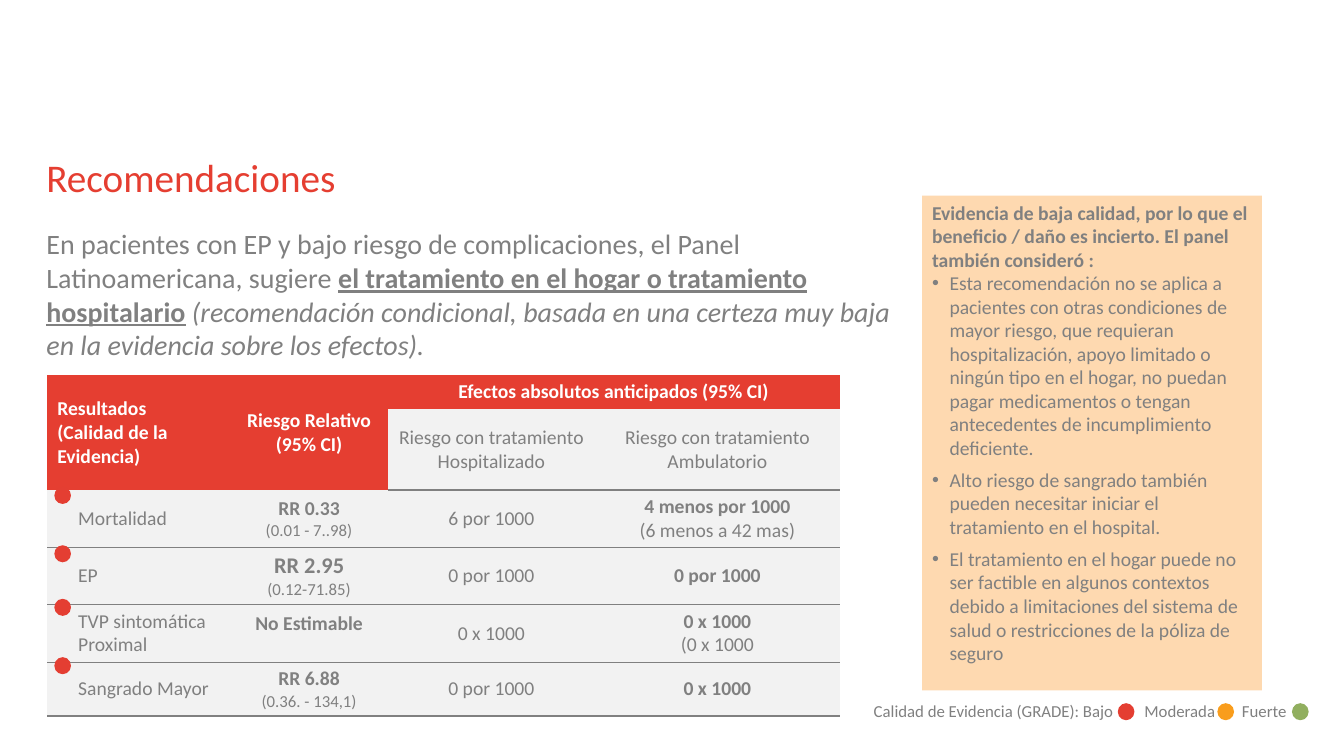
import pptx
import pptx.dml.color
import pptx.enum.shapes
import pptx.enum.text
import pptx.oxml.ns
import pptx.util
from lxml import etree
from pptx.util import Cm

COLORS = {
    "red": "E53E31", "low": "E43E32", "moderate": "F99D1C", "strong": "91AF5F",
    "gray": "808080", "white": "FFFFFF", "row": "F2F2F2", "panel": "FED9B0",
}
FONT = "Calibri"
PLAIN_TABLE_STYLE = "{2D5ABB26-0587-4C30-8999-92F81FD0307C}"
LEFT = pptx.enum.text.PP_ALIGN.LEFT
CENTER = pptx.enum.text.PP_ALIGN.CENTER
TOP = pptx.enum.text.MSO_ANCHOR.TOP
MIDDLE = pptx.enum.text.MSO_ANCHOR.MIDDLE
SHAPES = pptx.enum.shapes.MSO_SHAPE

COLUMN_WIDTHS = (4.62, 3.96, 5.23, 6.16)
ROW_HEIGHTS = (0.83, 2.05, 1.42, 1.44, 1.46, 1.34)

# Each cell is a list of lines: (text, size, bold)
OUTCOMES = [
    [[("Mortalidad", 14, False)],
     [("RR 0.33", 14, True), ("(0.01 - 7..98)", 12, False)],
     [("6 por 1000", 14, False)],
     [("4 menos por 1000", 14, True), ("(6 menos a 42 mas)", 14, False)]],
    [[("EP", 14, False)],
     [("RR 2.95", 16, True), ("(0.12-71.85)", 12, False)],
     [("0 por 1000", 14, False)],
     [("0 por 1000", 14, True)]],
    [[("TVP sintomática", 14, False), ("Proximal", 14, False)],
     [("No Estimable", 14, True)],
     [("0 x 1000", 14, False)],
     [("0 x 1000", 14, True), ("(0 x 1000", 14, False)]],
    [[("Sangrado Mayor", 14, False)],
     [("RR 6.88", 14, True), ("(0.36. - 134,1)", 12, False)],
     [("0 por 1000", 14, False)],
     [("0 x 1000", 14, True)]],
]

CONSIDERATIONS = [
    "Esta recomendación no se aplica a pacientes con otras condiciones de mayor riesgo, "
    "que requieran hospitalización, apoyo limitado o ningún tipo en el hogar, no puedan "
    "pagar medicamentos o tengan antecedentes de incumplimiento deficiente.",
    "Alto riesgo de sangrado también pueden necesitar iniciar el tratamiento en el hospital.",
    "El tratamiento en el hogar puede no ser factible en algunos contextos debido a "
    "limitaciones del sistema de salud o restricciones de la póliza de seguro",
]


def rgb(color):
    return pptx.dml.color.RGBColor.from_string(COLORS[color])


def write(paragraph, text, size=14, color="gray", bold=False, italic=False, underline=False):
    run = paragraph.add_run()
    run.text = text
    font = run.font
    font.name, font.size = FONT, pptx.util.Pt(size)
    font.bold, font.italic, font.underline = bold, italic, underline
    font.color.rgb = rgb(color)


def next_paragraph(frame, index):
    return frame.add_paragraph() if index else frame.paragraphs[0]


def add_filled(shapes, kind, left, top, width, height, color):
    shape = shapes.add_shape(kind, Cm(left), Cm(top), Cm(width), Cm(height))
    shape.shadow.inherit = False
    shape.fill.solid()
    shape.fill.fore_color.rgb = rgb(color)
    shape.line.fill.background()
    return shape


def add_dot(shapes, left, top, color="low"):
    add_filled(shapes, SHAPES.OVAL, left, top, 0.42, 0.43, color)


def add_text_frame(shapes, left, top, width, height):
    frame = shapes.add_textbox(Cm(left), Cm(top), Cm(width), Cm(height)).text_frame
    frame.word_wrap = True
    return frame


def underline_cell(cell):
    """Draw a thin gray border along the bottom of a cell."""
    border = etree.Element(pptx.oxml.ns.qn("a:lnB"), w="12700")
    fill = etree.SubElement(border, pptx.oxml.ns.qn("a:solidFill"))
    etree.SubElement(fill, pptx.oxml.ns.qn("a:srgbClr"), val=COLORS["gray"])
    cell._tc.get_or_add_tcPr().insert(0, border)


def fill_cell(cell, lines, fill="row", color="gray", align=CENTER, ruled=True):
    cell.fill.solid()
    cell.fill.fore_color.rgb = rgb(fill)
    cell.vertical_anchor = MIDDLE
    for index, (text, size, bold) in enumerate(lines):
        paragraph = next_paragraph(cell.text_frame, index)
        paragraph.alignment = align
        write(paragraph, text, size=size, color=color, bold=bold)
    if ruled:
        underline_cell(cell)


def add_results_table(slide):
    table = slide.shapes.add_table(
        len(ROW_HEIGHTS), len(COLUMN_WIDTHS), Cm(1.19), Cm(9.45),
        Cm(sum(COLUMN_WIDTHS)), Cm(sum(ROW_HEIGHTS))).table
    table.first_row = table.horz_banding = False
    table._tbl.tblPr.find(pptx.oxml.ns.qn("a:tableStyleId")).text = PLAIN_TABLE_STYLE
    for column, width in zip(table.columns, COLUMN_WIDTHS):
        column.width = Cm(width)
    for row, height in zip(table.rows, ROW_HEIGHTS):
        row.height = Cm(height)

    for start, end in (((0, 0), (1, 0)), ((0, 1), (1, 1)), ((0, 2), (0, 3))):
        table.cell(*start).merge(table.cell(*end))
    headings = [
        (["Resultados", "(Calidad de la Evidencia)"], LEFT),
        (["Riesgo Relativo", "(95% CI)"], CENTER),
        (["Efectos absolutos anticipados (95% CI)"], CENTER),
    ]
    for column, (lines, align) in enumerate(headings):
        fill_cell(table.cell(0, column), [(line, 14, True) for line in lines],
                  fill="red", color="white", align=align, ruled=False)
    for column, setting in ((2, "Hospitalizado"), (3, "Ambulatorio")):
        fill_cell(table.cell(1, column), [(f"Riesgo con tratamiento {setting}", 14, False)])

    for row, outcome in enumerate(OUTCOMES, start=2):
        for column, lines in enumerate(outcome):
            fill_cell(table.cell(row, column), lines, align=CENTER if column else LEFT)
        table.cell(row, 0).margin_left = Cm(0.78)
    table.cell(4, 1).margin_bottom = Cm(0.6)


def add_bullet(paragraph):
    properties = paragraph._p.get_or_add_pPr()
    properties.set("marL", str(Cm(0.44)))
    properties.set("indent", str(-Cm(0.44)))
    etree.SubElement(properties, pptx.oxml.ns.qn("a:buFont"), typeface="Arial")
    etree.SubElement(properties, pptx.oxml.ns.qn("a:buChar"), char="•")


def add_considerations(slide):
    panel = add_filled(slide.shapes, SHAPES.RECTANGLE, 23.24, 4.93, 8.56, 12.47, "panel")
    frame = panel.text_frame
    frame.word_wrap = True
    frame.vertical_anchor = TOP
    heading = frame.paragraphs[0]
    heading.alignment = LEFT
    write(heading, "Evidencia de baja calidad, por lo que el beneficio / daño es incierto. "
                   "El panel también consideró :", bold=True)
    for consideration in CONSIDERATIONS:
        paragraph = frame.add_paragraph()
        add_bullet(paragraph)
        paragraph.alignment = LEFT
        paragraph.space_after = pptx.util.Pt(6)
        write(paragraph, consideration)


def add_legend(slide):
    legend = slide.shapes.add_group_shape().shapes
    paragraph = add_text_frame(legend, 21.77, 17.53, 12.09, 0.76).paragraphs[0]
    tabs = etree.SubElement(paragraph._p.get_or_add_pPr(), pptx.oxml.ns.qn("a:tabLst"))
    for position in (6.82, 9.28):
        etree.SubElement(tabs, pptx.oxml.ns.qn("a:tab"), pos=str(Cm(position)), algn="l")
    write(paragraph, "Calidad de Evidencia (GRADE): Bajo\tModerada\tFuerte", size=12)
    for left, color in ((28.17, "low"), (30.68, "moderate"), (32.56, "strong")):
        add_dot(legend, left, 17.72, color)


def set_title(slide):
    title = slide.shapes.title
    title.left, title.top, title.width, title.height = Cm(1.17), Cm(3.73), Cm(30.48), Cm(1.98)
    frame = title.text_frame
    frame.auto_size = pptx.enum.text.MSO_AUTO_SIZE.NONE
    frame.vertical_anchor = TOP
    frame.margin_left = 0
    frame.paragraphs[0].alignment = LEFT
    write(frame.paragraphs[0], "Recomendaciones", size=28, color="red")


def add_recommendation(slide):
    frame = add_text_frame(slide.shapes, 1.17, 5.72, 21.67, 3.6)
    frame.margin_left = frame.margin_top = frame.margin_right = frame.margin_bottom = 0
    paragraph = frame.paragraphs[0]
    write(paragraph, "En pacientes con EP y bajo riesgo de complicaciones, el Panel "
                     "Latinoamericana, sugiere ", size=20)
    write(paragraph, "el tratamiento en el hogar o tratamiento hospitalario",
          size=20, bold=True, underline=True)
    write(paragraph, " ", size=20)
    write(paragraph, "(recomendación condicional, basada en una certeza muy baja en la "
                     "evidencia sobre los efectos).", size=20, italic=True)


def main():
    presentation = pptx.Presentation()
    presentation.slide_width, presentation.slide_height = Cm(33.87), Cm(19.05)
    slide = presentation.slides.add_slide(presentation.slide_layouts[5])
    set_title(slide)
    add_recommendation(slide)
    add_results_table(slide)
    add_considerations(slide)
    for top in (12.27, 13.74, 15.09, 16.56):
        add_dot(slide.shapes, 1.37, top)
    add_legend(slide)
    presentation.save("out.pptx")


if __name__ == "__main__":
    main()
